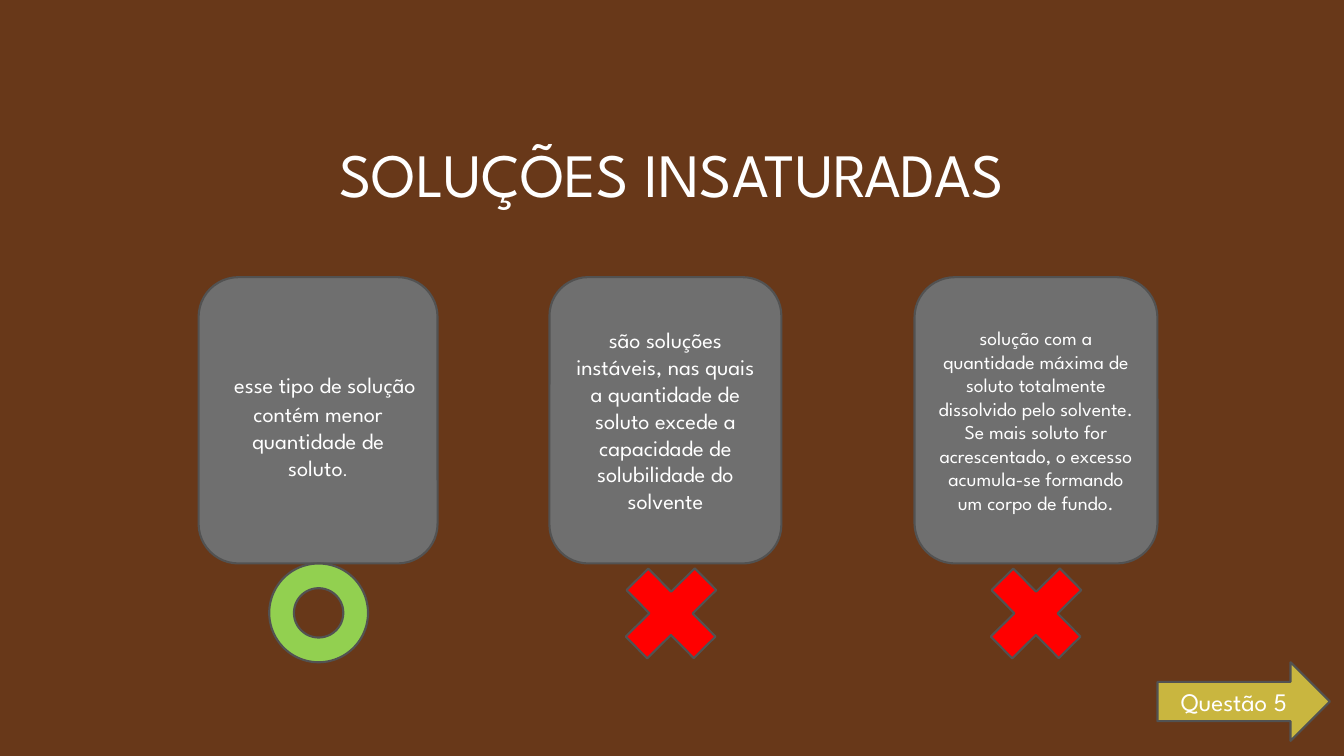
from pptx import Presentation
from pptx.dml.color import RGBColor
from pptx.enum.shapes import MSO_SHAPE
from pptx.enum.text import MSO_ANCHOR, PP_ALIGN
from pptx.util import Inches, Pt


def color(value):
    return RGBColor.from_string(value)


class SlideBuilder:
    font = "League Spartan"
    text_color = "FFFFFF"
    line_color = "525252"

    def __init__(self, deck, background):
        self.slide = deck.slides.add_slide(deck.slide_layouts[6])
        fill = self.slide.background.fill
        fill.solid()
        fill.fore_color.rgb = color(background)

    def set_text(self, box, spans):
        frame = box.text_frame
        frame.word_wrap = True
        frame.vertical_anchor = MSO_ANCHOR.MIDDLE
        para = frame.paragraphs[0]
        para.alignment = PP_ALIGN.CENTER
        para.font.name = self.font
        para.font.color.rgb = color(self.text_color)
        if len(spans) == 1:
            para.font.size = Pt(spans[0][1])
        for text, size in spans:
            span = para.add_run()
            span.text = text
            if len(spans) > 1:
                span.font.size = Pt(size)

    def title(self, text, size, left, top, width, height):
        box = self.slide.shapes.add_textbox(
            Inches(left), Inches(top), Inches(width), Inches(height))
        self.set_text(box, [(text, size)])

    def shape(self, kind, fill, left, top, width, height, spans=(), rotation=0):
        shape = self.slide.shapes.add_shape(
            kind, Inches(left), Inches(top), Inches(width), Inches(height))
        shape.shadow.inherit = False
        shape.rotation = rotation
        shape.fill.solid()
        shape.fill.fore_color.rgb = color(fill)
        shape.line.color.rgb = color(self.line_color)
        shape.line.width = Pt(1.5)
        if spans:
            self.set_text(shape, spans)

    def card(self, left, width, spans):
        self.shape(MSO_SHAPE.ROUNDED_RECTANGLE, "6F6F6F",
                   left, 2.75, width, 2.84, spans)

    def right_mark(self, left):
        self.shape(MSO_SHAPE.DONUT, "92D050", left, 5.59, 0.98, 0.98)

    def wrong_mark(self, left):
        self.shape(MSO_SHAPE.MATH_PLUS, "FF0000", left, 5.43, 1.29, 1.31,
                   rotation=45.3)


def main():
    deck = Presentation()
    deck.slide_width = Inches(13.33)
    deck.slide_height = Inches(7.5)
    page = SlideBuilder(deck, "683819")
    page.title("SOLUÇÕES INSATURADAS", 44, 1.25, 0.67, 10.83, 2.08)

    cards = [
        (1.97, 2.37, [
            (" ", 24),
            (" esse tipo de solução contém menor quantidade de soluto", 16),
            (".", 12)]),
        (5.45, 2.3, [
            ("são soluções instáveis, nas quais a quantidade de soluto excede "
             "a capacidade de solubilidade do solvente", 16)]),
        (9.07, 2.41, [
            ("solução com a quantidade máxima de soluto totalmente dissolvido "
             "pelo solvente. Se mais soluto for acrescentado, o excesso "
             "acumula-se formando um corpo de fundo.", 14)]),
    ]
    for left, width, spans in cards:
        page.card(left, width, spans)

    page.right_mark(2.67)
    for left in (6.01, 9.63):
        page.wrong_mark(left)
    page.shape(MSO_SHAPE.RIGHT_ARROW, "C9B63F", 11.48, 6.57, 1.71, 0.78,
               [("Questão 5", 18)])
    deck.save("out.pptx")


if __name__ == "__main__":
    main()
